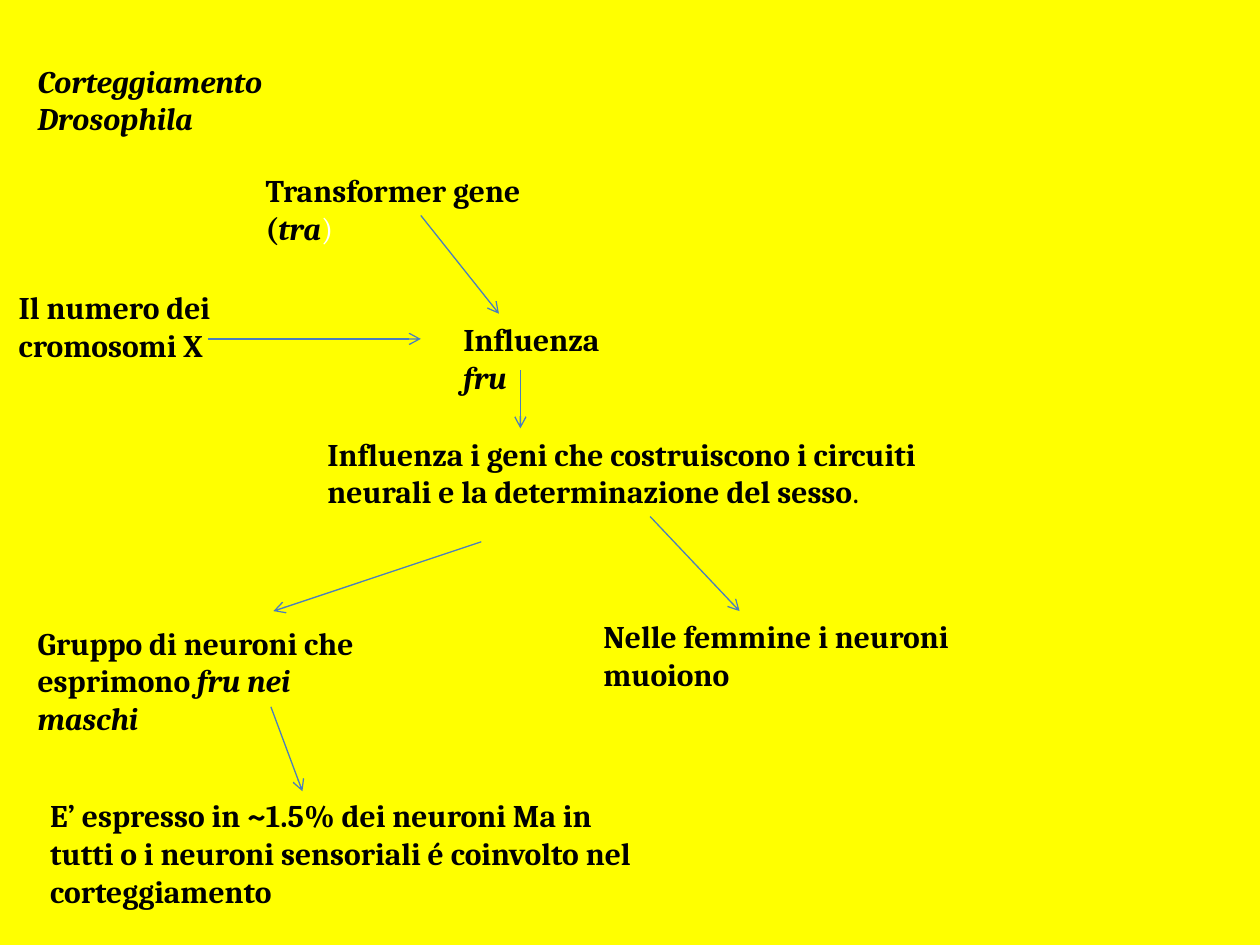
from lxml import etree
from pptx import Presentation
from pptx import util as u
from pptx.dml.color import RGBColor
from pptx.enum import shapes, text
from pptx.oxml import ns

YELLOW = RGBColor(0xFF, 0xFF, 0x00)
BLACK = RGBColor(0x00, 0x00, 0x00)
WHITE = RGBColor(0xFF, 0xFF, 0xFF)
BLUE = RGBColor(0x4B, 0x7E, 0xBC)


class Diagram:
    font = "Cambria"
    size = u.Pt(18)

    def __init__(self, page):
        self.page = page
        page.background.fill.solid()
        page.background.fill.fore_color.rgb = YELLOW

    def label(self, left, top, width, height, *spans):
        """Add bold text; each span is a string or (string, font settings)."""
        box = self.page.shapes.add_textbox(*map(u.Inches, (left, top, width, height)))
        frame = box.text_frame
        frame.word_wrap = True
        frame.auto_size = text.MSO_AUTO_SIZE.NONE
        para = frame.paragraphs[0]
        para.font.name, para.font.size, para.font.bold = self.font, self.size, True
        para.font.color.rgb = BLACK
        for item in spans:
            words, style = (item, {}) if isinstance(item, str) else item
            span = para.add_run()
            span.text = words
            if "bold" in style:
                span.font.bold = style["bold"]
            if "italic" in style:
                span.font.italic = style["italic"]
            if "color" in style:
                span.font.color.rgb = style["color"]
        return box

    def arrow(self, start, end, source=None):
        """Draw an arrow, joined to the bottom of source when one is given."""
        line = self.page.shapes.add_connector(
            shapes.MSO_CONNECTOR.STRAIGHT, *map(u.Inches, (*start, *end)))
        if source is not None:
            line.begin_connect(source, 2)
        line.line.color.rgb = BLUE
        line.line.width = u.Pt(0.75)
        etree.SubElement(line.line._get_or_add_ln(), ns.qn("a:tailEnd"), type="arrow")
        etree.SubElement(line._element.spPr, ns.qn("a:effectLst"))


def main():
    deck = Presentation()
    deck.slide_width, deck.slide_height = u.Inches(10), u.Inches(7.5)
    diagram = Diagram(deck.slides.add_slide(deck.slide_layouts[6]))
    italic = {"italic": True}

    diagram.label(0.2, 0.44, 2.6, 0.71, ("Corteggiamento Drosophila", italic))
    transformer = diagram.label(
        2.01, 1.31, 2.66, 0.4, "Transformer gene (", ("tra", italic),
        (")", {"bold": False, "color": WHITE}))
    diagram.label(3.58, 2.49, 1.67, 0.4, "Influenza ", ("fru", italic))
    diagram.label(
        2.5, 3.4, 5, 0.71,
        "Influenza i geni che costruiscono i circuiti neurali e la determinazione del sesso",
        (".", {"bold": False}))
    diagram.label(4.69, 4.85, 3.82, 0.4, "Nelle femmine i neuroni muoiono")
    diagram.label(0.2, 4.9, 2.91, 0.71, "Gruppo di neuroni che esprimono ",
                  ("fru nei maschi", italic))
    diagram.label(
        0.3, 6.27, 5, 1.01,
        "E’ espresso in ~1.5% dei neuroni Ma in tutti o i neuroni sensoriali "
        "é coinvolto nel corteggiamento")
    diagram.label(0.05, 2.24, 1.8, 0.71, "Il numero dei cromosomi X")

    diagram.arrow((3.34, 1.71), (3.96, 2.49), transformer)
    for start, end in (
        ((1.65, 2.69), (3.34, 2.69)),
        ((4.13, 2.94), (4.13, 3.4)),
        ((5.16, 4.1), (5.87, 4.85)),
        ((3.82, 4.3), (2.17, 4.85)),
        ((2.15, 5.61), (2.4, 6.28)),
    ):
        diagram.arrow(start, end)

    deck.save("out.pptx")


if __name__ == "__main__":
    main()
